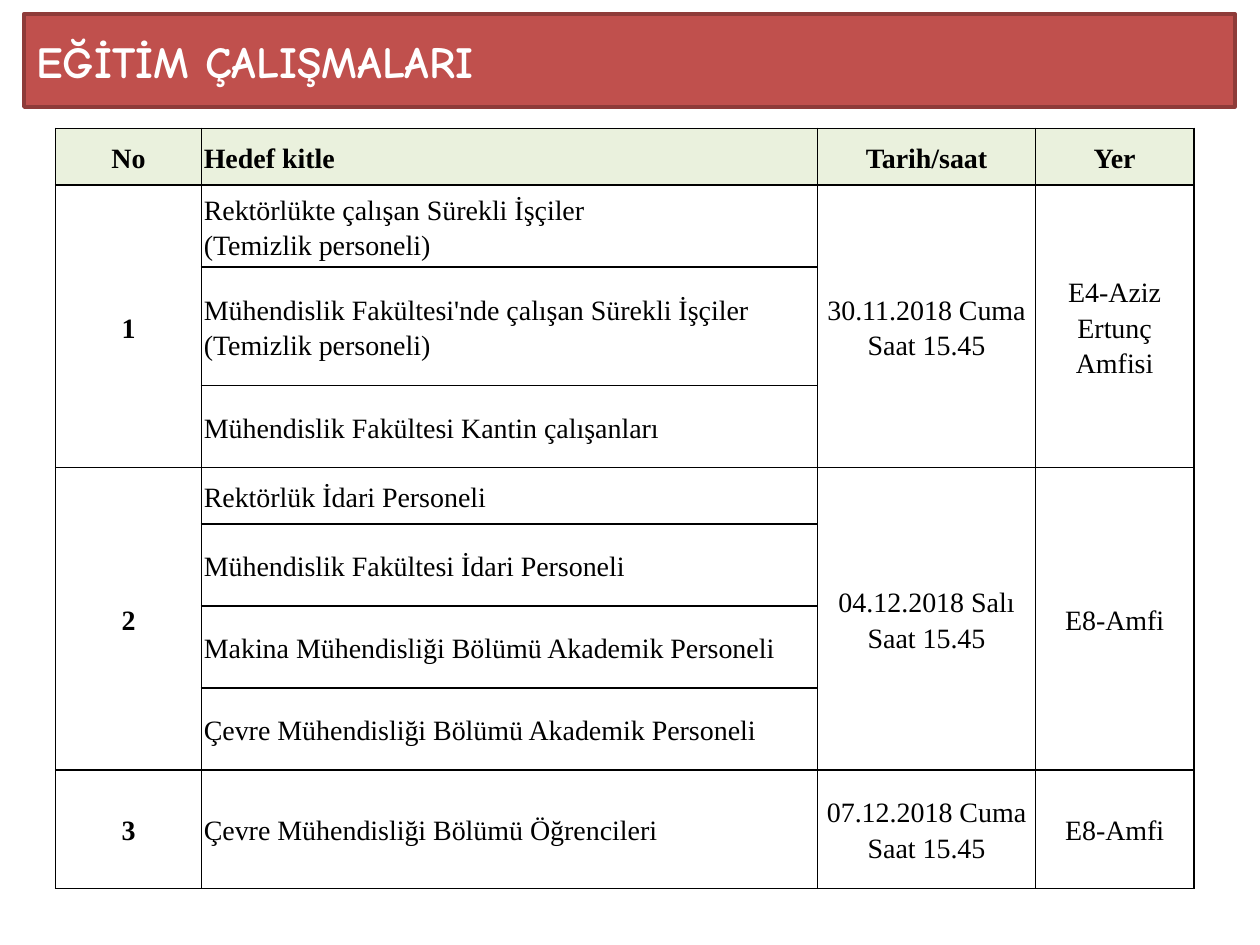
from lxml import etree
from pptx import Presentation, util as u
from pptx.dml.color import RGBColor
from pptx.enum import shapes, text
from pptx.oxml.ns import qn

ALIGN = text.PP_ALIGN
SHORT, MEDIUM, TALL = 32.4, 46.8, 67.7
COLUMNS = [83.3, 352.2, 124.4, 90.6]
HEADINGS = ["No", "Hedef kitle", "Tarih/saat", "Yer"]
SESSIONS = [
    ("1", "30.11.2018 Cuma\nSaat 15.45", "E4-Aziz Ertunç Amfisi", [
        ("Rektörlükte çalışan Sürekli İşçiler\n(Temizlik personeli)", MEDIUM),
        ("Mühendislik Fakültesi'nde çalışan Sürekli İşçiler\n(Temizlik personeli)", TALL),
        ("Mühendislik Fakültesi Kantin çalışanları", MEDIUM),
    ]),
    ("2", "04.12.2018 Salı\nSaat 15.45", "E8-Amfi", [
        ("Rektörlük İdari Personeli", SHORT),
        ("Mühendislik Fakültesi İdari Personeli", MEDIUM),
        ("Makina Mühendisliği Bölümü Akademik Personeli", MEDIUM),
        ("Çevre Mühendisliği Bölümü Akademik Personeli", MEDIUM),
    ]),
    ("3", "07.12.2018 Cuma\nSaat 15.45", "E8-Amfi", [
        ("Çevre Mühendisliği Bölümü Öğrencileri", TALL),
    ]),
]


def color(value):
    return RGBColor.from_string(value)


class Deck:
    title_font, body_font = "Comic Neue", "Times New Roman"
    red, dark_red, green = "C0504D", "8E3B39", "EAF1DD"
    black, white = "000000", "FFFFFF"

    def __init__(self, width, height):
        self.prs = Presentation()
        self.prs.slide_width, self.prs.slide_height = u.Pt(width), u.Pt(height)
        self.s = self.prs.slides.add_slide(self.prs.slide_layouts[6])

    def style(self, p, name, size, ink, bold, align):
        p.alignment = align
        p.font.name, p.font.size, p.font.bold = name, u.Pt(size), bold
        p.font.color.rgb = color(ink)

    def banner(self, title, *box):
        sp = self.s.shapes.add_shape(shapes.MSO_SHAPE.RECTANGLE, *map(u.Pt, box))
        sp.shadow.inherit = False
        sp.fill.solid()
        sp.fill.fore_color.rgb = color(self.red)
        sp.line.color.rgb = color(self.dark_red)
        sp.line.width = u.Pt(2)
        tf = sp.text_frame
        tf.vertical_anchor = text.MSO_ANCHOR.MIDDLE
        tf.text = title
        self.style(tf.paragraphs[0], self.title_font, 25.4, self.white, True, ALIGN.LEFT)

    def table(self, left, top, columns, rows):
        frame = self.s.shapes.add_table(len(rows), len(columns), *map(
            u.Pt, (left, top, sum(columns), sum(rows))))
        tbl = frame.table
        for column, width in zip(tbl.columns, columns):
            column.width = u.Pt(width)
        for row, height in zip(tbl.rows, rows):
            row.height = u.Pt(height)
        for cell in tbl.iter_cells():
            self.borders(cell)
            cell.fill.background()
        return tbl

    def borders(self, cell):
        pr = cell._tc.get_or_add_tcPr()
        for side in ("lnL", "lnR", "lnT", "lnB"):
            ln = etree.SubElement(pr, qn("a:" + side), w=str(u.Pt(1)))
            fill = etree.SubElement(ln, qn("a:solidFill"))
            etree.SubElement(fill, qn("a:srgbClr"), val=self.black)

    def cell(self, cell, words, align=ALIGN.CENTER, bold=False, fill=None):
        cell.margin_left = cell.margin_right = u.Pt(1.4)
        cell.margin_top = cell.margin_bottom = u.Pt(1.4)
        cell.vertical_anchor = text.MSO_ANCHOR.MIDDLE
        if fill:
            cell.fill.solid()
            cell.fill.fore_color.rgb = color(fill)
        cell.text = words
        for p in cell.text_frame.paragraphs:
            p.line_spacing = 1.15
            self.style(p, self.body_font, 16, self.black, bold, align)


def main():
    deck = Deck(720, 540)
    deck.banner("EĞİTİM ÇALIŞMALARI", 13.7, 7.9, 692, 53.3)

    heights = [height for session in SESSIONS for _, height in session[3]]
    tbl = deck.table(31.8, 73.4, COLUMNS, [SHORT] + heights)
    for col, heading in enumerate(HEADINGS):
        align = ALIGN.JUSTIFY if col == 1 else ALIGN.CENTER
        deck.cell(tbl.cell(0, col), heading, align, True, deck.green)

    row = 1
    for number, date, place, groups in SESSIONS:
        last = row + len(groups) - 1
        for col, words in ((0, number), (2, date), (3, place)):
            if last > row:
                tbl.cell(row, col).merge(tbl.cell(last, col))
            deck.cell(tbl.cell(row, col), words, bold=col == 0)
        for i, (group, _) in enumerate(groups):
            deck.cell(tbl.cell(row + i, 1), group, ALIGN.LEFT)
        row = last + 1

    deck.prs.save("out.pptx")


if __name__ == "__main__":
    main()
